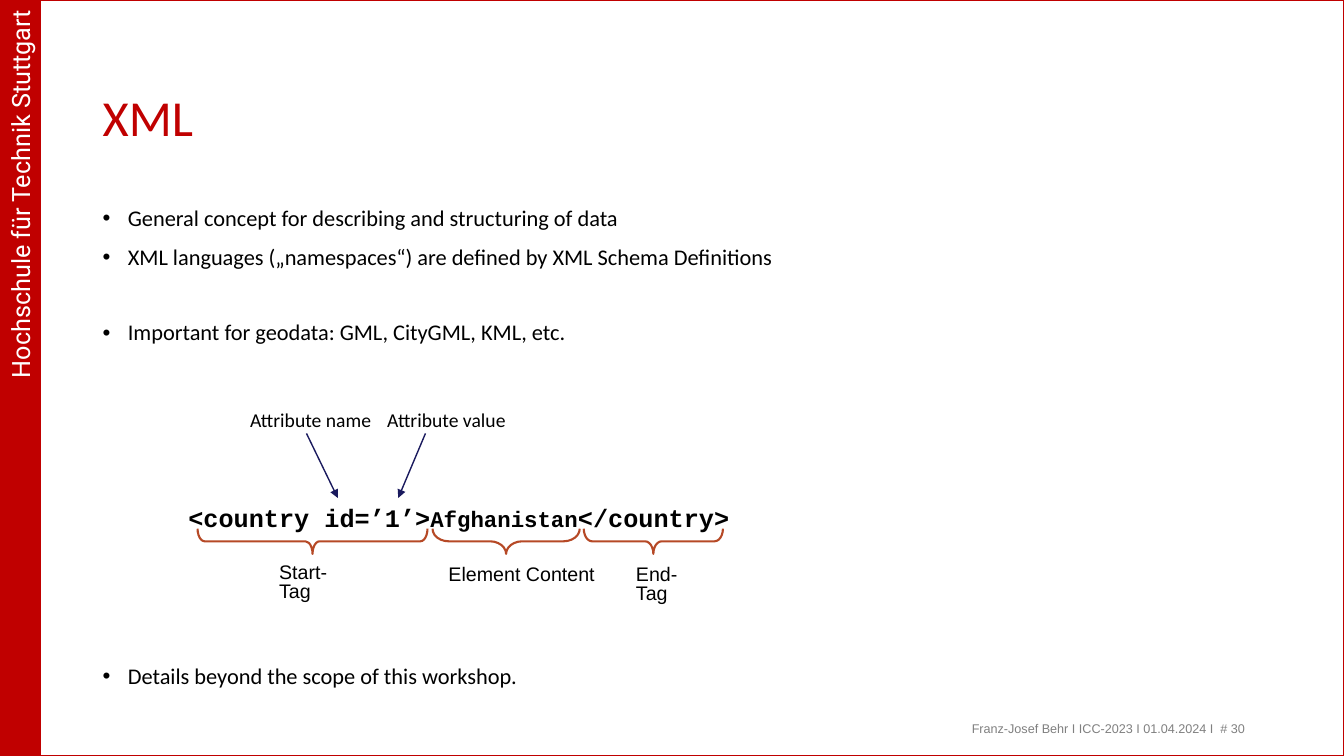
from dataclasses import dataclass

import pptx
import pptx.dml.color
import pptx.enum.shapes
import pptx.enum.text
import pptx.oxml.ns
import pptx.util
from lxml import etree

RGBColor = pptx.dml.color.RGBColor
Shapes = pptx.enum.shapes.MSO_SHAPE
Align = pptx.enum.text.PP_ALIGN
Anchor = pptx.enum.text.MSO_ANCHOR
Pt = pptx.util.Pt

RED = RGBColor(0xC0, 0x00, 0x00)
WHITE = RGBColor(0xFF, 0xFF, 0xFF)
BLACK = RGBColor(0x00, 0x00, 0x00)
GRAY = RGBColor(0x80, 0x80, 0x80)
RUST = RGBColor(0xB6, 0x49, 0x26)
NAVY = RGBColor(0x1A, 0x1A, 0x5E)

# The slide is a grid of 133.3 columns and 75 rows of a tenth of an inch.
COLUMNS, ROWS = 133.3, 75


def cells(count):
    return pptx.util.Inches(count / 10)


@dataclass
class Box:
    """A rectangle in grid cells."""
    left: float
    top: float
    width: float
    height: float

    def inner(self, left, top, width, height):
        """A box placed relative to this one."""
        return Box(self.left + left, self.top + top, width, height)

    def turned(self):
        """The box that covers this one after a quarter turn."""
        shift = (self.width - self.height) / 2
        return Box(self.left + shift, self.top - shift, self.height, self.width)

    def lengths(self):
        return [cells(n) for n in (self.left, self.top, self.width, self.height)]


def add_child(parent, tag, **attributes):
    child = etree.SubElement(parent, pptx.oxml.ns.qn(tag))
    for name, value in attributes.items():
        child.set(name, value)
    return child


def write_text(frame, runs, size=14, font="Calibri", color=BLACK, bold=False,
               align=Align.LEFT, anchor=Anchor.TOP, spacing=1.0, wrap=True,
               insets=(1, 0.5, 1, 0.5)):
    """Write one paragraph; runs is a text or a list of (text, size)."""
    frame.word_wrap = wrap
    frame.vertical_anchor = anchor
    (frame.margin_left, frame.margin_top,
     frame.margin_right, frame.margin_bottom) = map(cells, insets)
    paragraph = frame.paragraphs[0]
    if paragraph.runs:
        paragraph = frame.add_paragraph()
    paragraph.alignment = align
    paragraph.line_spacing = spacing
    for text, run_size in [(runs, size)] if isinstance(runs, str) else runs:
        run = paragraph.add_run()
        run.text = text
        run.font.size = Pt(run_size)
        run.font.name = font
        run.font.bold = bold
        run.font.color.rgb = color
    return paragraph


def add_text(slide, box, runs, **text_format):
    shape = slide.shapes.add_textbox(*box.lengths())
    write_text(shape.text_frame, runs, **text_format)


def add_shape(slide, box, kind, line, weight, fill=None, rotation=0):
    shape = slide.shapes.add_shape(kind, *box.lengths())
    shape.shadow.inherit = False
    shape.rotation = rotation
    shape.line.color.rgb = line
    shape.line.width = Pt(weight)
    if fill is None:
        shape.fill.background()
    else:
        shape.fill.solid()
        shape.fill.fore_color.rgb = fill
    return shape


def add_arrow(slide, box, start, end):
    points = [cells(n) for x, y in (start, end) for n in (box.left + x, box.top + y)]
    arrow = slide.shapes.add_connector(
        pptx.enum.shapes.MSO_CONNECTOR.STRAIGHT, *points)
    arrow.line.color.rgb = NAVY
    arrow.line.width = Pt(1)
    line = arrow._element.spPr.find(pptx.oxml.ns.qn("a:ln"))
    add_child(line, "a:tailEnd", type="triangle", w="med", len="med")
    add_child(arrow._element.spPr, "a:effectLst")


def add_frame(slide, box):
    bar = add_shape(slide, box.inner(0, 0, 4, box.height).turned(),
                    Shapes.RECTANGLE, RED, 0.75, fill=RED, rotation=270)
    write_text(bar.text_frame, "Hochschule für Technik Stuttgart", size=18,
               font="Roboto", color=WHITE, align=Align.RIGHT, anchor=Anchor.MIDDLE)
    add_text(slide, box.inner(95.4, 71.2, 34.4, 3.1),
             "Franz-Josef Behr I ICC-2023 I 01.04.2024 I  # 30",
             size=9, font="Arial", color=GRAY, spacing=0.9)
    add_shape(slide, box, Shapes.RECTANGLE, RED, 1)


def add_title(slide, box):
    add_text(slide, box, "XML", size=36, color=RED, anchor=Anchor.MIDDLE, spacing=0.9)


def add_bullets(slide, box):
    frame = slide.shapes.add_textbox(*box.lengths()).text_frame
    bullets = [
        ("General concept for describing and structuring of data", 10),
        ("XML languages („namespaces“) are defined by XML Schema Definitions", 10),
        ("Important for geodata: GML, CityGML, KML, etc.", 37),
        ("Details beyond the scope of this workshop.", 228),
    ]
    for text, space in bullets:
        paragraph = write_text(frame, text, size=16, spacing=0.9)
        paragraph.space_before = Pt(space)
        properties = paragraph._p.get_or_add_pPr()
        properties.set("marL", str(cells(2.5)))
        properties.set("indent", str(-cells(2.5)))
        add_child(properties, "a:buFont", typeface="Arial")
        add_child(properties, "a:buChar", char="•")


def add_element_diagram(slide, box):
    """Code line with attribute arrows above and braced parts below."""
    code_insets = (1, 0.9, 1, 0.5)
    add_text(slide, box.inner(0, 9, box.width, 3.8),
             [("<country id=’1’>", 18), ("Afghanistan", 16), ("</country>", 18)],
             font="Courier New", bold=True, spacing=0.8, wrap=False, insets=code_insets)

    attributes = [
        ("Attribute name", 7.1, 12.2, 12.7, 15.8),
        ("Attribute value", 20.7, 12, 24.5, 21.8),
    ]
    for text, left, width, start, end in attributes:
        add_text(slide, box.inner(left, 0, width, 2.4), text, wrap=False, insets=(0, 0, 0, 0))
        add_arrow(slide, box, (start, 2.5), (end, 8.9))

    # Text, brace left, brace width, brace curve, label left, top, width, wrap
    parts = [
        ("Start-Tag", 1.9, 22.8, 0.28, 9, 14.6, 9.1, True),
        ("Element Content", 25.2, 14.6, 0.64, 25.8, 14.8, 16.6, False),
        ("End-Tag", 40.2, 13.8, 0.33, 44.4, 14.8, 8.3, True),
    ]
    for text, left, width, curve, label_left, label_top, label_width, wrap in parts:
        brace = add_shape(slide, box.inner(left, 11.95, width, 2.5).turned(),
                          Shapes.LEFT_BRACE, RUST, 1.5, rotation=270)
        brace.adjustments[0] = curve
        add_text(slide, box.inner(label_left, label_top, label_width, 3.4), text,
                 font="Arial", spacing=0.8, wrap=wrap, insets=code_insets)


def main():
    presentation = pptx.Presentation()
    presentation.slide_width = cells(COLUMNS)
    presentation.slide_height = cells(ROWS)
    slide = presentation.slides.add_slide(presentation.slide_layouts[6])
    add_frame(slide, Box(0, 0, COLUMNS, ROWS))
    add_title(slide, Box(9.2, 5.5, 115, 12.9))
    add_bullets(slide, Box(9.2, 20.1, 115, 49.3))
    add_element_diagram(slide, Box(17.7, 40.5, 57.6, 18.2))
    presentation.save("out.pptx")


if __name__ == "__main__":
    main()
